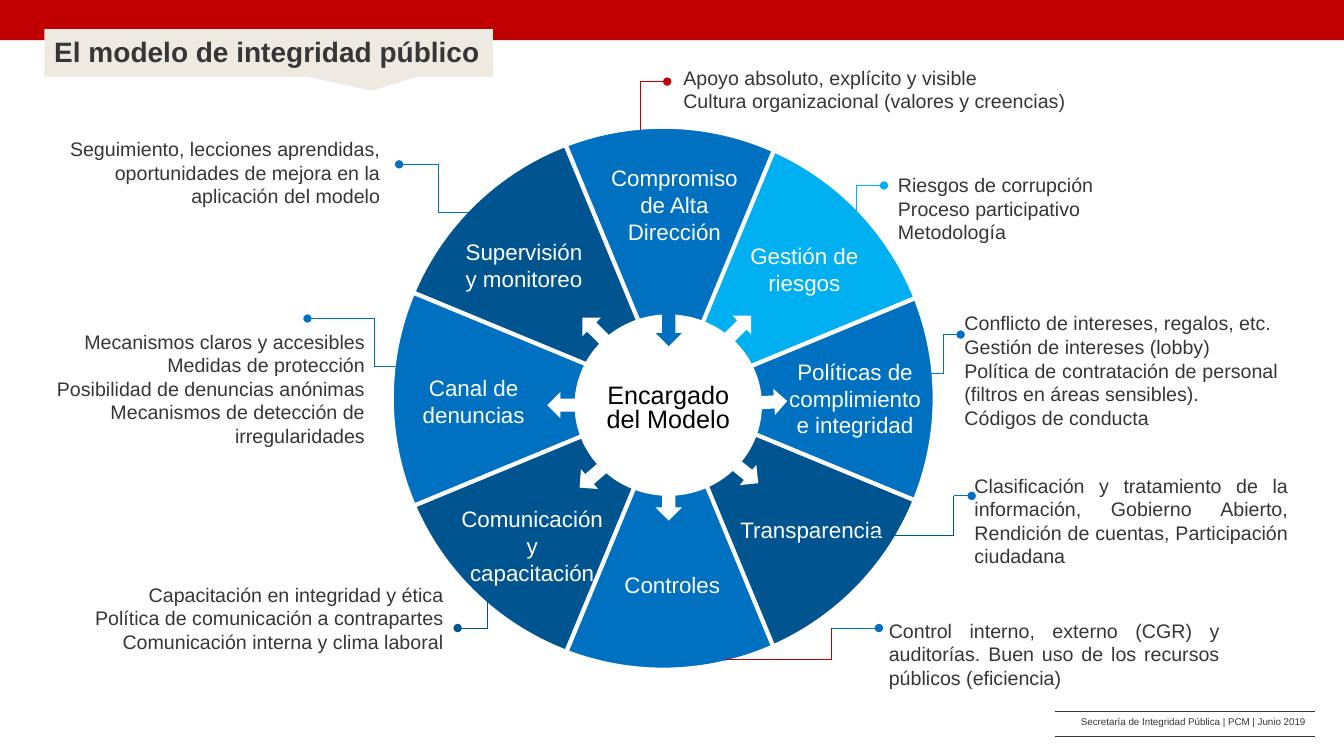
import math

import pptx
import pptx.dml.color
import pptx.enum.shapes
import pptx.enum.text
import pptx.oxml
import pptx.oxml.ns
import pptx.util

Pt = pptx.util.Pt
SHAPE = pptx.enum.shapes.MSO_SHAPE
ALIGN = pptx.enum.text.PP_ALIGN
LEFT, CENTER, RIGHT, JUSTIFY = ALIGN.LEFT, ALIGN.CENTER, ALIGN.RIGHT, ALIGN.JUSTIFY

RED, BLUE, NAVY, SKY = "C00000", "0070C0", "005490", "00B0F0"
INK, WHITE, SAND, BLACK = "363639", "FFFFFF", "EEEAE2", "000000"

TITLE = "El modelo de integridad público"
FOOTER = "Secretaría de Integridad Pública | PCM | Junio 2019"
HUB_TEXT = "Encargado del Modelo"

# Clockwise from the top: colour, label, label left, top, height
SECTORS = [
    (BLUE, "Compromiso de Alta Dirección", 422, 114, 65.5),
    (SKY, "Gestión de riesgos", 514.8, 169.2, 46),
    (BLUE, "Políticas de complimiento e integridad", 551, 252, 65.5),
    (NAVY, "Transparencia", 519.8, 365, 26.6),
    (BLUE, "Controles", 420.5, 404.6, 26.6),
    (NAVY, "Comunicación\vy\vcapacitación", 320.4, 357.1, 65.5),
    (BLUE, "Canal de denuncias", 278.6, 263.5, 46),
    (NAVY, "Supervisión\ny monitoreo", 314.6, 166.3, 46),
]
WHEEL_X, WHEEL_Y, SECTOR_REACH = 479.2, 285.2, 110.7
SECTOR_W, SECTOR_H, LABEL_W = 176.4, 213.1, 119.5

# Arrow centre x, y, rotation, colour
ARROWS = [
    (477.7, 235.4, 90, BLUE),
    (528.1, 234, 315, WHITE),
    (550.4, 287.3, 356.3, WHITE),
    (532.4, 337.7, 39.2, WHITE),
    (477.7, 360, 90, WHITE),
    (423, 340.6, 139.2, WHITE),
    (402.8, 289.4, 180, WHITE),
    (424.4, 235.4, 225, WHITE),
]

# Text, alignment, box, leader points ending at the dot, leader colour, dot colour
NOTES = [
    ("Apoyo absoluto, explícito y visible\nCultura organizacional (valores y creencias)",
     LEFT, (481, 43.2, 290, 41),
     [(457.2, 92.9), (457.2, 58.3), (476.6, 58.3)], RED, RED),
    ("Riesgos de corrupción\nProceso participativo\nMetodología",
     LEFT, (634.3, 120.2, 155, 58),
     [(612, 153.4), (612, 132.5), (631.4, 132.5)], SKY, SKY),
    ("Conflicto de intereses, regalos, etc.\nGestión de intereses (lobby)\n"
     "Política de contratación de personal (filtros en áreas sensibles).\nCódigos de conducta",
     JUSTIFY, (681.8, 218.9, 238.3, 92),
     [(665.3, 267.1), (673.9, 267.1), (673.9, 239), (686.2, 239)], BLUE, BLUE),
    ("Clasificación y tratamiento de la información, Gobierno Abierto, "
     "Rendición de cuentas, Participación ciudadana",
     JUSTIFY, (689, 334.8, 238.3, 75),
     [(619.9, 382.3), (681.1, 382.3), (681.1, 354.2), (694.1, 354.2)], NAVY, BLUE),
    ("Control interno, externo (CGR) y auditorías. Buen uso de los recursos "
     "públicos (eficiencia)",
     JUSTIFY, (627.8, 438.5, 250.6, 58),
     [(517.7, 470.9), (594, 470.9), (594, 448.6), (627.8, 448.6)], RED, BLUE),
    ("Capacitación en integridad y ética\nPolítica de comunicación a contrapartes\n"
     "Comunicación interna y clima laboral",
     RIGHT, (29.5, 412.6, 294.5, 58),
     [(348.5, 414), (348.5, 448.6), (326.9, 448.6)], NAVY, NAVY),
    ("Mecanismos claros y accesibles\nMedidas de protección\n"
     "Posibilidad de denuncias anónimas\nMecanismos de detección de irregularidades",
     RIGHT, (33.1, 231.8, 234.7, 108.7),
     [(290.2, 262.1), (267.8, 262.1), (267.8, 227.5), (219.6, 227.5)], BLUE, BLUE),
    ("Seguimiento, lecciones aprendidas, oportunidades de mejora en la aplicación del modelo",
     RIGHT, (41.8, 94.3, 236.9, 58),
     [(334.8, 151.9), (313.2, 151.9), (313.2, 117.4), (285.1, 117.4)], BLUE, BLUE),
]


def rgb(color):
    return pptx.dml.color.RGBColor.from_string(color)


def add_xml(parent, tag, body="", attrs=""):
    ns = pptx.oxml.ns.nsdecls("a")
    parent.append(pptx.oxml.parse_xml(f"<a:{tag} {ns} {attrs}>{body}</a:{tag}>"))


def style_text(tf, text, size, color, align, bold=False, spacing=None):
    tf.word_wrap = True
    tf.text = text
    for p in tf.paragraphs:
        p.alignment = align
        if spacing:
            p.line_spacing = Pt(spacing)
        for r in p.runs:
            r.font.name, r.font.size, r.font.bold = "Arial", Pt(size), bold
            r.font.color.rgb = rgb(color)


def add_text(s, text, box, size, color, align, **options):
    tb = s.shapes.add_textbox(*map(Pt, box))
    style_text(tb.text_frame, text, size, color, align, **options)


def add_solid(s, kind, x, y, w, h, color, rotation=0):
    sp = s.shapes.add_shape(kind, Pt(x), Pt(y), Pt(w), Pt(h))
    sp.shadow.inherit = False
    sp.fill.solid()
    sp.fill.fore_color.rgb = rgb(color)
    sp.line.fill.background()
    sp.rotation = rotation
    return sp


def add_leader(s, points, color, dot_color):
    """Draw a bent line whose last segment ends in a dot."""
    last = len(points) - 2
    for i, (start, end) in enumerate(zip(points, points[1:])):
        line = s.shapes.add_connector(pptx.enum.shapes.MSO_CONNECTOR.STRAIGHT,
                                      *map(Pt, start + end))
        line.line.width = Pt(0.75)
        line.line.color.rgb = rgb(dot_color if i == last else color)
        if i == last:
            add_xml(line.line._get_or_add_ln(), "tailEnd", attrs='type="oval"')
        add_xml(line._element.spPr, "effectLst")


def add_footer(s):
    table = s.shapes.add_table(1, 1, Pt(753.8), Pt(508.3), Pt(185.8), Pt(17.3)).table
    table.first_row = table.horz_banding = False
    cell = table.cell(0, 0)
    style_text(cell.text_frame, FOOTER, 7, INK, RIGHT)
    tc_pr = cell._tc.get_or_add_tcPr()
    solid = f'<a:solidFill><a:srgbClr val="{INK}"/></a:solidFill>'
    for side, body in (("lnL", "<a:noFill/>"), ("lnR", "<a:noFill/>"),
                       ("lnT", solid), ("lnB", solid)):
        add_xml(tc_pr, side, body, 'w="3175"')
    cell.fill.background()


def add_wheel(s):
    for i, (color, *_) in enumerate(SECTORS):
        angle = math.radians(45 * i)
        x = WHEEL_X + SECTOR_REACH * math.sin(angle)
        y = WHEEL_Y - SECTOR_REACH * math.cos(angle)
        add_solid(s, SHAPE.ISOSCELES_TRIANGLE, x - SECTOR_W / 2, y - SECTOR_H / 2,
                  SECTOR_W, SECTOR_H, color, (180 + 45 * i) % 360)
    add_solid(s, SHAPE.OVAL, 410.4, 224.6, 133.9, 129.6, WHITE)
    rim = add_solid(s, SHAPE.OVAL, 256.3, 67, 434.9, 434.9, WHITE)
    rim.fill.background()
    rim.line.color.rgb = rgb(WHITE)
    rim.line.width = Pt(50)
    for _, label, x, y, h in SECTORS:
        add_text(s, label, (x, y, LABEL_W, h), 16, WHITE, CENTER)
    add_text(s, HUB_TEXT, (418.3, 272.2, 118.1, 41.8), 18, BLACK, CENTER, spacing=17)
    for x, y, rotation, color in ARROWS:
        add_solid(s, SHAPE.RIGHT_ARROW, x - 11.9, y - 9.4, 23.8, 18.7, color, rotation)


def main():
    prs = pptx.Presentation()
    prs.slide_width, prs.slide_height = Pt(960), Pt(540)
    s = prs.slides.add_slide(prs.slide_layouts[6])
    add_solid(s, SHAPE.RECTANGLE, 0, 0, 960, 28.8, RED)
    add_footer(s)
    banner = add_solid(s, SHAPE.RECTANGULAR_CALLOUT, 31.7, 20.9, 320.4, 33.8, SAND)
    banner.adjustments[0], banner.adjustments[1] = 0.23, 0.8
    add_text(s, TITLE, (31.7, 20.9, 324, 31.7), 20, INK, LEFT, bold=True)
    add_wheel(s)
    for text, align, box, points, color, dot_color in NOTES:
        add_text(s, text, box, 14, INK, align)
        add_leader(s, points, color, dot_color)
    prs.save("out.pptx")


if __name__ == "__main__":
    main()
